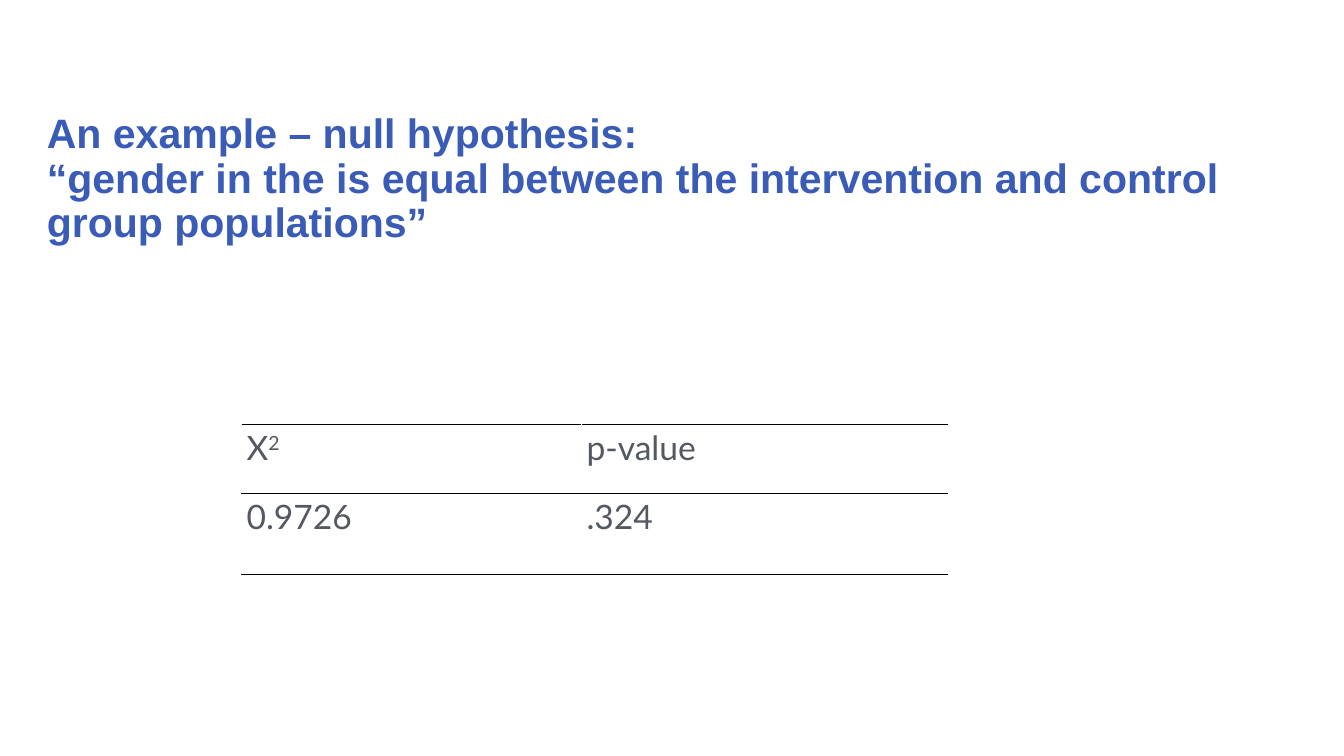
"""Build a slide showing a chi-square test of a null hypothesis."""
from lxml.etree import SubElement
from pptx import Presentation
from pptx.dml.color import RGBColor
from pptx.enum.text import MSO_ANCHOR as Anchor
from pptx.oxml import parse_xml
from pptx.oxml.ns import nsdecls, qn
from pptx.util import Cm, Pt

BLUE = RGBColor(0x3A, 0x5C, 0xB7)
GREY = RGBColor(0x54, 0x58, 0x60)
BLACK = RGBColor(0x00, 0x00, 0x00)


class SlideWriter:
    def __init__(self, slide):
        self.slide = slide
        self.heading_font = "Arial"
        self.body_font = "Lato"

    def style(self, run, name, size, color, bold=False):
        font = run.font
        font.name, font.size, font.bold = name, Pt(size), bold
        font.color.rgb = color

    def heading(self, text, left, top, width, height):
        frame = self.slide.shapes.add_textbox(left, top, width, height).text_frame
        frame.word_wrap = True
        frame.vertical_anchor = Anchor.MIDDLE
        paragraph = frame.paragraphs[0]
        paragraph.text = text
        paragraph.line_spacing = 0.9
        for run in paragraph.runs:
            self.style(run, self.heading_font, 44, BLUE, bold=True)

    def rule_cell(self, cell):
        cell.fill.background()
        properties = cell._tc.get_or_add_tcPr()
        for position, side in enumerate(("lnT", "lnB")):
            line = parse_xml(f'<a:{side} {nsdecls("a")} w="{Pt(1)}"/>')
            fill = SubElement(line, qn("a:solidFill"))
            SubElement(fill, qn("a:srgbClr")).set("val", str(BLACK))
            properties.insert(position, line)

    def cell_text(self, cell, text, superscript=""):
        cell.margin_left = cell.margin_right = Cm(0.18)
        cell.margin_top = cell.margin_bottom = 0
        paragraph = cell.text_frame.paragraphs[0]
        paragraph.text = text
        paragraph.line_spacing = 1.07
        paragraph.space_after = Pt(8)
        if superscript:
            exponent = paragraph.add_run()
            exponent.text = superscript
            exponent._r.get_or_add_rPr().set("baseline", "30000")
        for run in paragraph.runs:
            self.style(run, self.body_font, 36, GREY)

    def table(self, rows, left, top, widths, heights):
        table = self.slide.shapes.add_table(
            len(heights), len(widths), left, top, sum(widths), sum(heights)
        ).table
        table.first_row = table.horz_banding = False
        for column, width in zip(table.columns, widths):
            column.width = width
        for row, height, texts in zip(table.rows, heights, rows):
            row.height = height
            for cell, content in zip(row.cells, texts):
                self.rule_cell(cell)
                self.cell_text(cell, *content)


def main():
    deck = Presentation()
    deck.slide_width, deck.slide_height = Cm(50.8), Cm(28.58)
    writer = SlideWriter(deck.slides.add_slide(deck.slide_layouts[6]))
    writer.heading(
        "An example – null hypothesis:\v“gender in the is equal between "
        "the intervention and control group populations”",
        Cm(1.52), Cm(4.04), Cm(47.78), Cm(5.51),
    )
    test_results = [
        [("Χ", "2"), ("p-value",)],
        [("0.9726",), (".324",)],
    ]
    writer.table(
        test_results, Cm(9.14), Cm(16.05),
        [Cm(12.85), Cm(13.84)], [Cm(2.59), Cm(3.07)],
    )
    deck.save("out.pptx")


if __name__ == "__main__":
    main()
